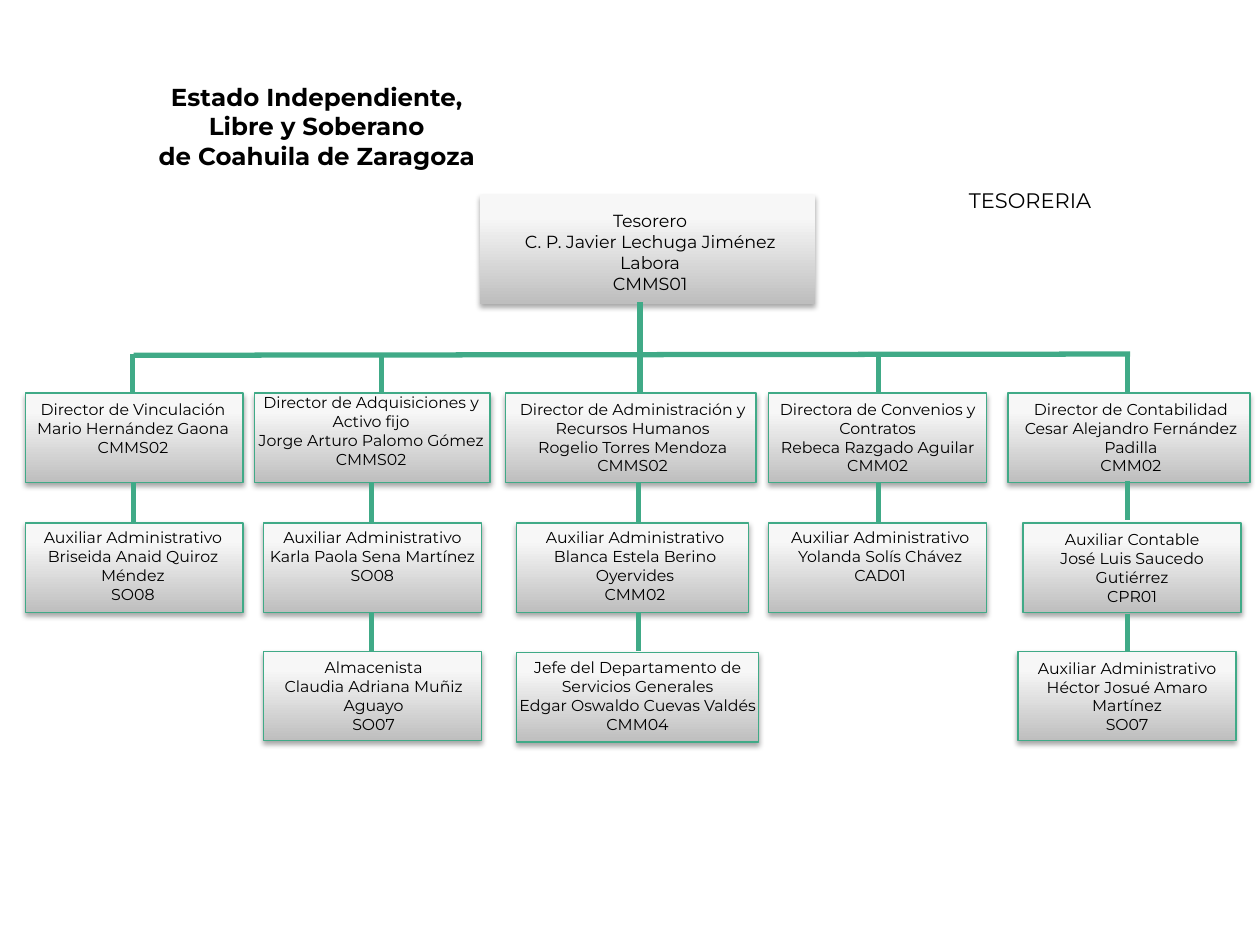
from lxml import etree
from pptx import Presentation
from pptx.dml.color import RGBColor
from pptx.enum.shapes import MSO_CONNECTOR, MSO_SHAPE
from pptx.enum.text import MSO_ANCHOR, MSO_AUTO_SIZE, PP_ALIGN
from pptx.oxml import parse_xml
from pptx.oxml.ns import qn
from pptx.util import Inches, Pt

BLACK = RGBColor(0x00, 0x00, 0x00)
GREEN = RGBColor(0x40, 0xAA, 0x87)
NAMESPACE = 'xmlns:a="http://schemas.openxmlformats.org/drawingml/2006/main"'
GRADIENT = f"""<a:gradFill {NAMESPACE} rotWithShape="1"><a:gsLst>
<a:gs pos="0"><a:srgbClr val="BEBEBE"/></a:gs>
<a:gs pos="80000"><a:srgbClr val="F7F7F7"/></a:gs>
<a:gs pos="100000"><a:srgbClr val="F8F8F8"/></a:gs>
</a:gsLst><a:lin ang="16200000" scaled="0"/></a:gradFill>"""
SHADOW = f"""<a:effectLst {NAMESPACE}>
<a:outerShdw blurRad="39370" dist="22860" dir="5400000" rotWithShape="0">
<a:srgbClr val="000000"><a:alpha val="35000"/></a:srgbClr></a:outerShdw></a:effectLst>"""

DIRECTORS, ASSISTANTS, STAFF = 3.12, 4.15, 5.17
CARD_WIDTH, CARD_HEIGHT = 1.73, 0.71

# Card (left, top, width), text box (left, top, width) or None for text in the card, lines
positions = [
    ((0.2, DIRECTORS, CARD_WIDTH), (0.04, 3.12, 2.03),
     ["Director de Vinculación Mario Hernández Gaona", "CMMS02"]),
    ((2.02, DIRECTORS, 1.87), (1.93, 3.07, 2.03),
     ["Director de Adquisiciones y Activo fijo", "Jorge Arturo Palomo Gómez", "CMMS02"]),
    ((4.01, DIRECTORS, 1.99), (3.68, 3.12, 2.68),
     ["Director de Administración y", "Recursos Humanos", "Rogelio Torres Mendoza", "CMMS02"]),
    ((6.1, DIRECTORS, CARD_WIDTH), (6.02, 3.12, 1.89),
     ["Directora de Convenios y Contratos", "Rebeca Razgado Aguilar", "CMM02"]),
    ((8, DIRECTORS, 1.92), (7.83, 3.12, 2.29),
     ["Director de Contabilidad", "Cesar Alejandro Fernández", "Padilla", "CMM02"]),
    ((0.2, ASSISTANTS, CARD_WIDTH), (0.04, 4.14, 2.03),
     ["Auxiliar Administrativo", "Briseida Anaid Quiroz Méndez", "SO08"]),
    ((2.09, ASSISTANTS, CARD_WIDTH), (2.01, 4.14, 1.89),
     ["Auxiliar Administrativo", "Karla Paola Sena Martínez", "SO08"]),
    ((4.1, ASSISTANTS, 1.84), (4.06, 4.14, 1.96),
     ["Auxiliar Administrativo", "Blanca Estela Berino Oyervides", "CMM02"]),
    ((6.1, ASSISTANTS, CARD_WIDTH), (5.97, 4.14, 2.03),
     ["Auxiliar Administrativo", "Yolanda Solís Chávez", "CAD01"]),
    ((8.12, ASSISTANTS, CARD_WIDTH), None,
     ["Auxiliar Contable", "José Luis Saucedo Gutiérrez", "CPR01"]),
    ((2.09, STAFF, CARD_WIDTH), (1.95, 5.17, 2.03),
     ["Almacenista", "Claudia Adriana Muñiz Aguayo", "SO07"]),
    ((4.1, 5.18, 1.92), (3.96, 5.17, 2.2),
     ["Jefe del Departamento de Servicios Generales", "Edgar Oswaldo Cuevas Valdés", "CMM04"]),
    ((8.08, STAFF, CARD_WIDTH), None,
     ["Auxiliar Administrativo", "Héctor Josué Amaro Martínez", "SO07"]),
]

# Start x, start y, end x, end y
branches = [
    (5.08, 2.4, 5.08, 2.82),
    (8.97, 2.81, 1.06, 2.82),
    (8.95, 2.79, 8.95, 3.11),
    (8.95, 3.82, 8.95, 4.13),
    (8.95, 4.87, 8.95, 5.17),
]
branches += [(x, 2.81, x, 3.12) for x in (1.05, 3.03, 5.08, 6.97)]
branches += [(x, 3.83, x, 4.14) for x in (1.06, 2.95, 5.07, 6.97)]
branches += [(x, 4.86, x, 5.17) for x in (2.95, 5.07)]

presentation = Presentation()
presentation.slide_width = Inches(10)
presentation.slide_height = Inches(7.5)
slide = presentation.slides.add_slide(presentation.slide_layouts[6])


def write_text(shape, lines, size=9, bold=False, wrap=True, anchor=MSO_ANCHOR.TOP,
               auto_size=MSO_AUTO_SIZE.SHAPE_TO_FIT_TEXT):
    frame = shape.text_frame
    frame.text = "\n".join(lines)
    frame.word_wrap = wrap
    frame.auto_size = auto_size
    frame.vertical_anchor = anchor
    for paragraph in frame.paragraphs:
        paragraph.alignment = PP_ALIGN.CENTER
        font = paragraph.runs[0].font
        font.name, font.size, font.bold = "Montserrat", Pt(size), bold
        font.color.rgb = BLACK


def add_card(left, top, width, height=CARD_HEIGHT, outlined=True):
    """Add a grey gradient rectangle with a soft shadow."""
    card = slide.shapes.add_shape(MSO_SHAPE.RECTANGLE, Inches(left), Inches(top),
                                  Inches(width), Inches(height))
    if outlined:
        card.line.color.rgb = GREEN
        card.line.width = Pt(0.75)
    else:
        card.line.fill.background()
    properties = card.element.spPr
    properties.find(qn("a:ln")).addprevious(parse_xml(GRADIENT))
    properties.append(parse_xml(SHADOW))
    return card


add_card(3.81, 1.55, 2.66, height=0.86, outlined=False)

for card_place, text_place, lines in positions:
    card = add_card(*card_place)
    if text_place is None:
        write_text(card, lines, anchor=MSO_ANCHOR.MIDDLE, auto_size=MSO_AUTO_SIZE.NONE)
    else:
        left, top, width = text_place
        label = slide.shapes.add_textbox(Inches(left), Inches(top),
                                         Inches(width), Inches(CARD_HEIGHT))
        write_text(label, lines)

for branch in branches:
    connector = slide.shapes.add_connector(MSO_CONNECTOR.STRAIGHT, *map(Inches, branch))
    connector.line.color.rgb = GREEN
    connector.line.width = Pt(3)
    etree.SubElement(connector.element.spPr, qn("a:effectLst"))

treasurer = slide.shapes.add_textbox(Inches(4.06), Inches(1.62), Inches(2.2), Inches(0.77))
write_text(treasurer, ["Tesorero", "C. P. Javier Lechuga Jiménez Labora", "CMMS01"], size=10)

department = slide.shapes.add_textbox(Inches(7.59), Inches(1.44), Inches(1.17), Inches(0.3))
write_text(department, ["TESORERIA"], size=12, wrap=False)

title = slide.shapes.add_textbox(Inches(0.98), Inches(0.6), Inches(3.07), Inches(1.04))
write_text(title, ["Estado Independiente, Libre y Soberano", "de Coahuila de Zaragoza"],
           size=14, bold=True)

presentation.save("out.pptx")
